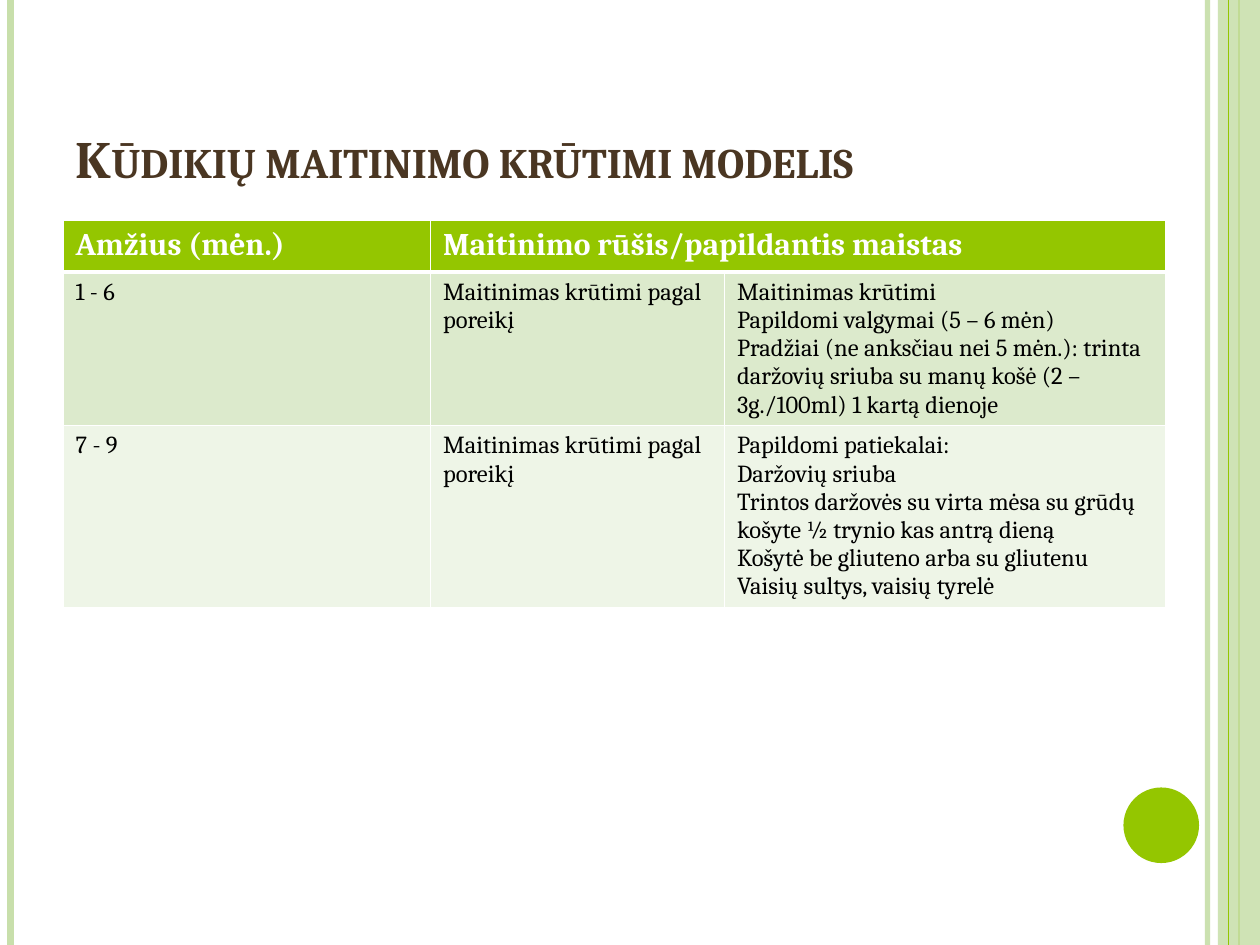
from dataclasses import dataclass

from lxml.etree import SubElement
from pptx import Presentation
from pptx.dml.color import RGBColor
from pptx.enum.shapes import MSO_CONNECTOR, MSO_SHAPE
from pptx.enum.text import MSO_ANCHOR, MSO_AUTO_SIZE, PP_ALIGN
from pptx.oxml.ns import qn
from pptx.util import Pt


@dataclass(frozen=True)
class Theme:
    font: str = "Cambria"
    green: str = "94C600"
    pale_green: str = "C8DFAB"
    brown: str = "4A3622"
    white: str = "FFFFFF"
    black: str = "000000"
    first_band: str = "DCEACC"
    second_band: str = "EEF5E7"
    title_size: float = 30
    header_size: float = 18
    body_size: float = 14


@dataclass(frozen=True)
class Rule:
    left: float
    color: str
    width: float
    opacity: int = 100


@dataclass(frozen=True)
class Panel:
    kind: MSO_SHAPE
    left: float
    top: float
    width: float
    height: float
    color: str
    opacity: int = 100


@dataclass(frozen=True)
class TableRow:
    height: float
    fill: str
    texts: tuple[str, ...]
    header: bool = False


THEME = Theme()
SLIDE_WIDTH, SLIDE_HEIGHT = 720, 540
DECORATIONS = (
    Rule(690, THEME.pale_green, 3, 93),
    Rule(6, THEME.pale_green, 4.5),
    Rule(708, THEME.green, 1.5),
    Panel(MSO_SHAPE.RECTANGLE, 696, 0, 24, SLIDE_HEIGHT, THEME.pale_green, 87),
    Rule(702, THEME.green, 0.75),
    Panel(MSO_SHAPE.OVAL, 642, 450, 43.2, 43.2, THEME.green),
)
COLUMN_WIDTHS = (210, 168, 252)
BREASTFEEDING = "Maitinimas krūtimi pagal poreikį"
ROWS = (
    TableRow(29.5, THEME.green, ("Amžius (mėn.)", "Maitinimo rūšis/papildantis maistas"), True),
    TableRow(87.5, THEME.first_band, (
        "1 - 6",
        BREASTFEEDING,
        "Maitinimas krūtimi\n"
        "Papildomi valgymai (5 – 6 mėn)\n"
        "Pradžiai (ne anksčiau nei 5 mėn.): trinta daržovių sriuba su manų košė "
        "(2 – 3g./100ml) 1 kartą dienoje",
    )),
    TableRow(103, THEME.second_band, (
        "7 - 9",
        BREASTFEEDING,
        "Papildomi patiekalai:\n"
        "Daržovių sriuba\n"
        "Trintos daržovės su virta mėsa su grūdų košyte ½ trynio kas antrą dieną\n"
        "Košytė be gliuteno arba su gliutenu\n"
        "Vaisių sultys, vaisių tyrelė",
    )),
)


def write_text(text_frame, text: str, *, size: float, color: str,
               bold: bool = False, small_caps: bool = False) -> None:
    text_frame.text = text
    for paragraph in text_frame.paragraphs:
        paragraph.alignment = PP_ALIGN.LEFT
        for run in paragraph.runs:
            run.font.name = THEME.font
            run.font.size = Pt(size)
            run.font.bold = bold
            run.font.color.rgb = RGBColor.from_string(color)
            if small_caps:
                run.font._element.set("cap", "small")


def set_fill(fill, color: str, opacity: int = 100) -> None:
    fill.solid()
    fill.fore_color.rgb = RGBColor.from_string(color)
    if opacity < 100:
        color_element = fill._xPr.find(qn("a:solidFill"))[0]
        SubElement(color_element, qn("a:alpha")).set("val", str(opacity * 1000))


def draw_rule(slide, rule: Rule) -> None:
    connector = slide.shapes.add_connector(
        MSO_CONNECTOR.STRAIGHT, Pt(rule.left), Pt(0), Pt(rule.left), Pt(SLIDE_HEIGHT))
    connector.line.width = Pt(rule.width)
    set_fill(connector.line.fill, rule.color, rule.opacity)
    SubElement(connector._element.spPr, qn("a:effectLst"))


def draw_panel(slide, panel: Panel) -> None:
    shape = slide.shapes.add_shape(
        panel.kind, Pt(panel.left), Pt(panel.top), Pt(panel.width), Pt(panel.height))
    shape.shadow.inherit = False
    shape.line.fill.background()
    set_fill(shape.fill, panel.color, panel.opacity)


def set_borders(cell, top: float, bottom: float) -> None:
    properties = cell._tc.get_or_add_tcPr()
    widths = {"a:lnL": 1, "a:lnR": 1, "a:lnT": top, "a:lnB": bottom}
    for position, (tag, width) in enumerate(widths.items()):
        border = SubElement(properties, qn(tag), w=str(Pt(width)))
        fill = SubElement(border, qn("a:solidFill"))
        SubElement(fill, qn("a:srgbClr"), val=THEME.white)
        properties.insert(position, border)


def draw_title(slide, text: str) -> None:
    title = slide.shapes.title
    title.left, title.top, title.width, title.height = Pt(36), Pt(21.6), Pt(588), Pt(90)
    title.text_frame.word_wrap = True
    title.text_frame.auto_size = MSO_AUTO_SIZE.NONE
    title.text_frame.vertical_anchor = MSO_ANCHOR.BOTTOM
    write_text(title.text_frame, text, size=THEME.title_size, color=THEME.brown,
               bold=True, small_caps=True)


def draw_table(slide, rows: tuple[TableRow, ...]) -> None:
    table = slide.shapes.add_table(
        len(rows), len(COLUMN_WIDTHS), Pt(36), Pt(126),
        Pt(sum(COLUMN_WIDTHS)), Pt(sum(row.height for row in rows))).table
    for column, width in zip(table.columns, COLUMN_WIDTHS):
        column.width = Pt(width)
    table.cell(0, 1).merge(table.cell(0, 2))
    for index, row in enumerate(rows):
        table.rows[index].height = Pt(row.height)
        for cell in table.rows[index].cells:
            set_fill(cell.fill, row.fill)
            set_borders(cell, 3 if index == 1 else 1, 3 if row.header else 1)
        for column, text in enumerate(row.texts):
            write_text(table.cell(index, column).text_frame, text,
                       size=THEME.header_size if row.header else THEME.body_size,
                       color=THEME.white if row.header else THEME.black,
                       bold=row.header)


def main() -> None:
    presentation = Presentation()
    presentation.slide_width, presentation.slide_height = Pt(SLIDE_WIDTH), Pt(SLIDE_HEIGHT)
    slide = presentation.slides.add_slide(presentation.slide_layouts.get_by_name("Title Only"))
    set_fill(slide.background.fill, THEME.white)
    for decoration in DECORATIONS:
        if isinstance(decoration, Rule):
            draw_rule(slide, decoration)
        else:
            draw_panel(slide, decoration)
    draw_title(slide, "Kūdikių maitinimo krūtimi modelis")
    draw_table(slide, ROWS)
    presentation.save("out.pptx")


if __name__ == "__main__":
    main()
